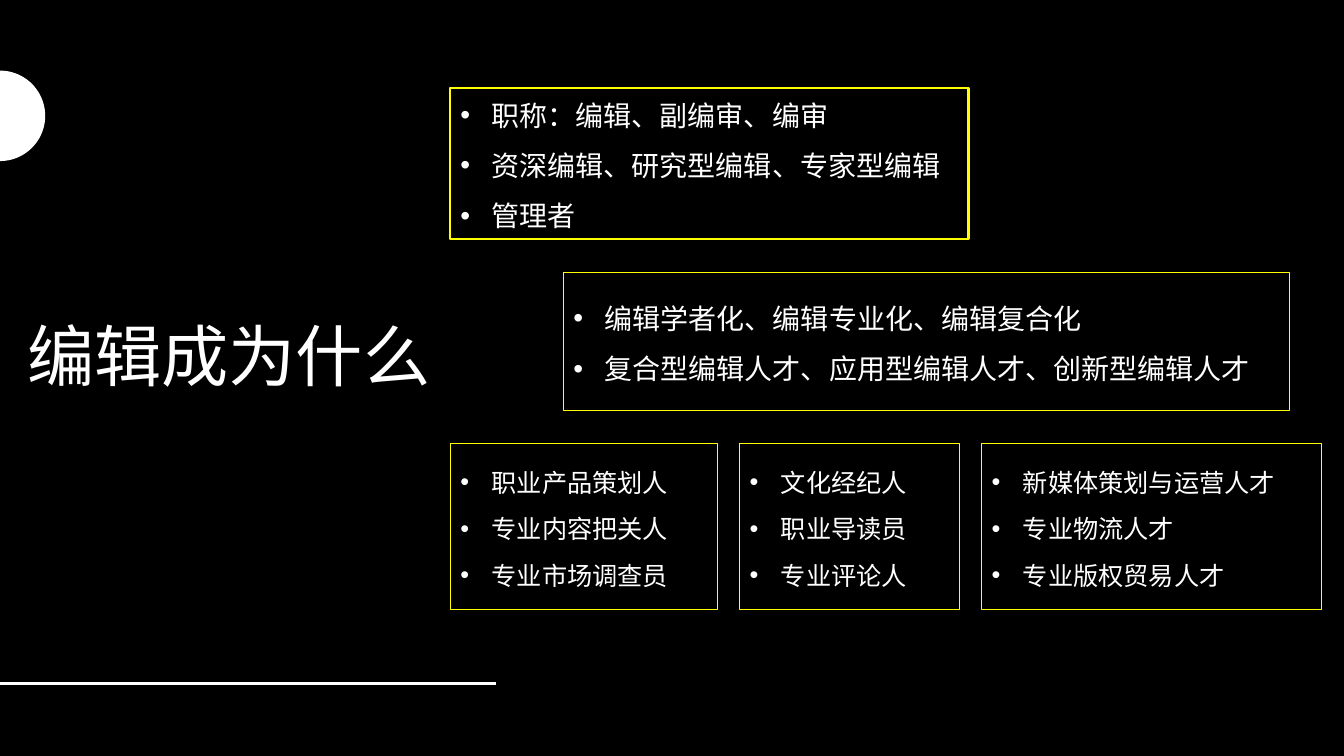
import math
from dataclasses import dataclass

from lxml import etree
from pptx import Presentation
from pptx import util as u
from pptx.dml.color import RGBColor
from pptx.enum import shapes, text
from pptx.oxml.ns import qn
from pptx.util import Cm

BLACK, WHITE, YELLOW = "000000", "FFFFFF", "FFFF00"


@dataclass
class Box:
    left: float
    top: float
    width: float
    height: float
    lines: list[str]
    size: int = 20
    border: float = 0.75


def colour(value: str) -> RGBColor:
    return RGBColor.from_string(value)


def style_run(r, font: str, size: int) -> None:
    r.font.name = font
    r.font.size = u.Pt(size)
    r.font.color.rgb = colour(WHITE)


def add_bullet(p) -> None:
    pr = p._p.get_or_add_pPr()
    indent = Cm(0.79)
    pr.set("marL", str(indent))
    pr.set("indent", str(-indent))
    font = etree.SubElement(pr, qn("a:buFont"))
    font.set("typeface", "Arial")
    etree.SubElement(pr, qn("a:buChar")).set("char", "•")


def add_box(s, box: Box) -> None:
    sp = s.shapes.add_shape(
        shapes.MSO_SHAPE.RECTANGLE,
        Cm(box.left), Cm(box.top), Cm(box.width), Cm(box.height),
    )
    sp.shadow.inherit = False
    sp.fill.background()
    sp.line.color.rgb = colour(YELLOW)
    sp.line.width = u.Pt(box.border)
    tf = sp.text_frame
    tf.text = "\n".join(box.lines)
    tf.word_wrap = True
    tf.vertical_anchor = text.MSO_ANCHOR.MIDDLE
    for p in tf.paragraphs:
        p.alignment = text.PP_ALIGN.LEFT
        p.line_spacing = 1.12
        p.space_before = u.Pt(9)
        add_bullet(p)
        style_run(p.runs[0], "Cabin", box.size)


def add_title(s, title: str) -> None:
    sp = s.shapes.title
    sp.left, sp.top, sp.width, sp.height = Cm(0.43), Cm(2.21), Cm(10.92), Cm(13.72)
    tf = sp.text_frame
    tf.text = title
    tf.word_wrap = True
    tf.auto_size = text.MSO_AUTO_SIZE.NONE
    tf.vertical_anchor = text.MSO_ANCHOR.MIDDLE
    p = tf.paragraphs[0]
    p.alignment = text.PP_ALIGN.LEFT
    p.line_spacing = 0.9
    style_run(p.runs[0], "Cambria", 48)


def add_half_disc(s, centre_y: float, radius: float, steps: int = 48) -> None:
    angles = [math.pi * (i / steps - 0.5) for i in range(steps + 1)]
    points = [
        (Cm(radius * math.cos(a)), Cm(centre_y + radius * math.sin(a)))
        for a in angles
    ]
    builder = s.shapes.build_freeform(*points[0])
    builder.add_line_segments(points[1:], close=True)
    sp = builder.convert_to_shape()
    sp.shadow.inherit = False
    sp.fill.solid()
    sp.fill.fore_color.rgb = colour(WHITE)
    sp.line.fill.background()


def add_rule(s, y: float, length: float) -> None:
    line = s.shapes.add_connector(
        shapes.MSO_CONNECTOR.STRAIGHT, 0, Cm(y), Cm(length), Cm(y)
    )
    line.line.color.rgb = colour(WHITE)
    line.line.width = u.Pt(2)
    etree.SubElement(line._element.spPr, qn("a:effectLst"))


def main() -> None:
    prs = Presentation()
    prs.slide_width, prs.slide_height = Cm(33.87), Cm(19.05)
    s = prs.slides.add_slide(prs.slide_layouts[5])
    s.background.fill.solid()
    s.background.fill.fore_color.rgb = colour(BLACK)

    # Title and decoration
    add_title(s, "编辑成为什么")
    add_half_disc(s, centre_y=2.92, radius=1.14)
    add_rule(s, y=17.22, length=12.5)

    # Titles and directions
    add_box(s, Box(11.35, 2.21, 13.06, 3.81, [
        "职称：编辑、副编审、编审",
        "资深编辑、研究型编辑、专家型编辑",
        "管理者",
    ], border=1.5))
    add_box(s, Box(14.2, 6.86, 18.31, 3.48, [
        "编辑学者化、编辑专业化、编辑复合化",
        "复合型编辑人才、应用型编辑人才、创新型编辑人才",
    ]))

    # Row of roles, with equal gaps
    roles = [
        (6.73, ["职业产品策划人", "专业内容把关人", "专业市场调查员"]),
        (5.54, ["文化经纪人", "职业导读员", "专业评论人"]),
        (8.56, ["新媒体策划与运营人才", "专业物流人才", "专业版权贸易人才"]),
    ]
    left, gap = 11.35, 0.56
    for width, lines in roles:
        add_box(s, Box(left, 11.18, width, 4.19, lines, size=18))
        left += width + gap

    prs.save("out.pptx")


if __name__ == "__main__":
    main()
